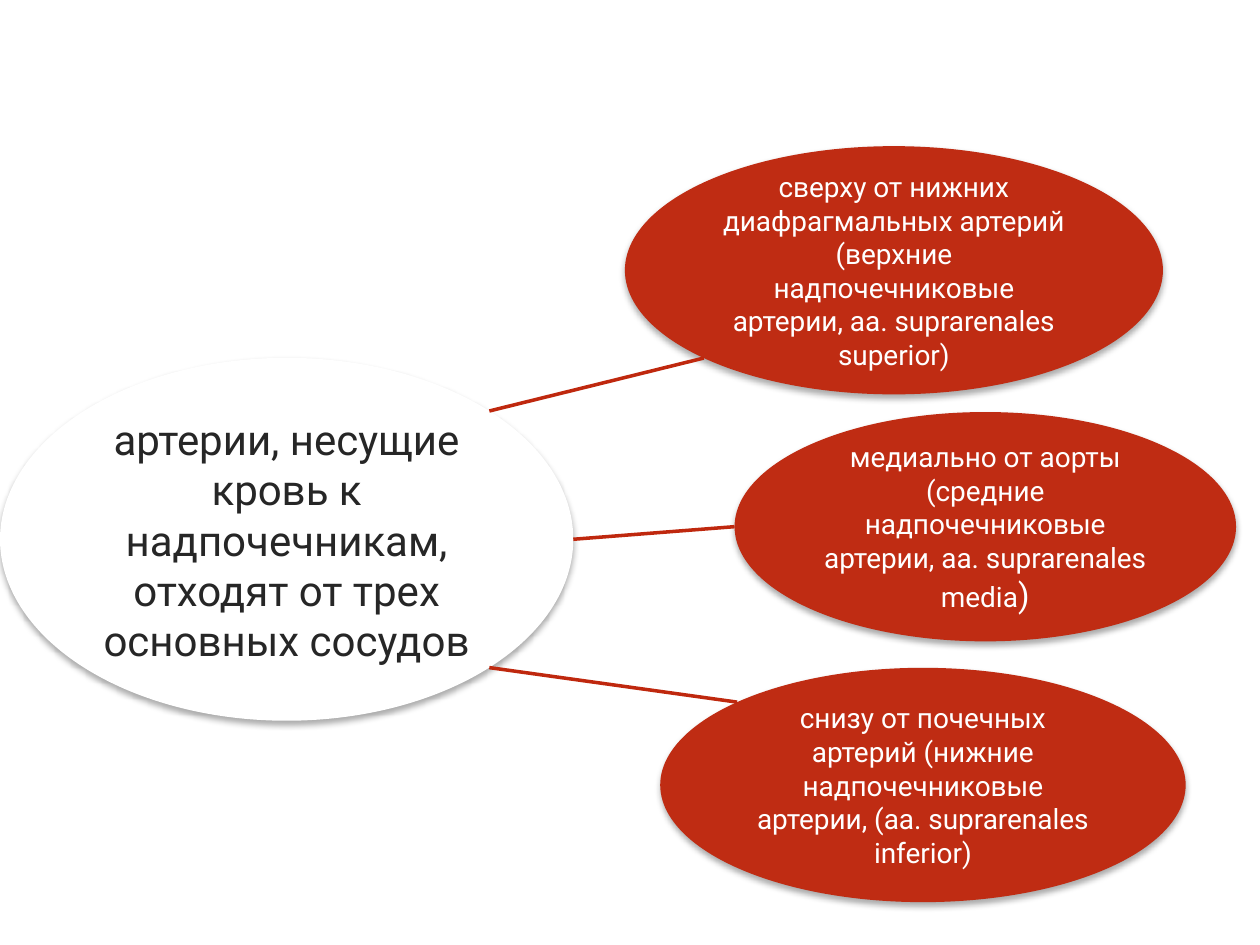
from math import cos, radians, sin

from lxml.etree import SubElement
from pptx import Presentation
from pptx.dml.color import RGBColor
from pptx.enum.shapes import MSO_CONNECTOR, MSO_SHAPE
from pptx.enum.text import MSO_ANCHOR, PP_ALIGN
from pptx.oxml.ns import qn
from pptx.util import Inches, Pt

WIDTH, HEIGHT = Inches(10), Inches(7.5)
FONT = "Roboto"
COLORS = {
    "white": "FFFFFF",
    "red": "BF2C13",
    "line": "BF280E",
    "dark": "262626",
    "shadow": "000000",
}

SOURCE_TEXT = ("артерии, несущие кровь к надпочечникам, "
               "отходят от трех основных сосудов")

# Position in percent of the slide (left, top, width, height), text spans
# with sizes, and the angles at which the line leaves the source and arrives.
BRANCHES = [
    ((49.6, 15.47, 42.7, 26.27),
     [("сверху от нижних диафрагмальных артерий (верхние надпочечниковые "
       "артерии, аа. suprarenales superior)", 16)],
     -45, 135),
    ((58.3, 43.6, 39.8, 24.27),
     [("медиально от аорты (средние надпочечниковые "
       "артерии, аа. suprarenales media", 16), (")", 19)],
     0, 180),
    ((52.4, 70.67, 41.7, 24.8),
     [("снизу от почечных артерий (нижние надпочечниковые "
       "артерии, (аа. suprarenales inferior)", 16)],
     45, 225),
]


def color(name):
    return RGBColor.from_string(COLORS[name])


def add_soft_shadow(shape):
    effects = SubElement(shape._element.spPr, qn("a:effectLst"))
    shadow = SubElement(effects, qn("a:outerShdw"), blurRad=str(Pt(3.5)),
                        dist=str(Pt(2.2)), dir="5400000", rotWithShape="0")
    tint = SubElement(shadow, qn("a:srgbClr"), val=COLORS["shadow"])
    SubElement(tint, qn("a:alpha"), val="32000")


def add_ellipse(page, place, spans, fill, ink):
    left, top, width, height = place
    ellipse = page.shapes.add_shape(
        MSO_SHAPE.OVAL, int(WIDTH * left / 100), int(HEIGHT * top / 100),
        int(WIDTH * width / 100), int(HEIGHT * height / 100))
    ellipse.fill.solid()
    ellipse.fill.fore_color.rgb = color(fill)
    ellipse.line.fill.background()
    add_soft_shadow(ellipse)

    frame = ellipse.text_frame
    frame.word_wrap = True
    frame.vertical_anchor = MSO_ANCHOR.MIDDLE
    paragraph = frame.paragraphs[0]
    paragraph.alignment = PP_ALIGN.CENTER
    paragraph.font.name = FONT
    paragraph.font.color.rgb = color(ink)
    for text, size in spans:
        span = paragraph.add_run()
        span.text = text
        span.font.size = Pt(size)
    return ellipse


def rim_point(ellipse, angle):
    """Return the point of the rim at an angle, clockwise from the right."""
    turn = radians(angle)
    return (int(ellipse.left + ellipse.width * (1 + cos(turn)) / 2),
            int(ellipse.top + ellipse.height * (1 + sin(turn)) / 2))


def add_link(page, start, end):
    link = page.shapes.add_connector(MSO_CONNECTOR.STRAIGHT, *start, *end)
    link.line.color.rgb = color("line")
    link.line.width = Pt(2)
    SubElement(link._element.spPr, qn("a:effectLst"))


def main():
    deck = Presentation()
    deck.slide_width, deck.slide_height = WIDTH, HEIGHT
    page = deck.slides.add_slide(deck.slide_layouts[6])

    source = add_ellipse(page, (0, 37.87, 45.5, 38.4),
                         [(SOURCE_TEXT, 24)], "white", "dark")
    for place, spans, leave, arrive in BRANCHES:
        branch = add_ellipse(page, place, spans, "red", "white")
        add_link(page, rim_point(source, leave), rim_point(branch, arrive))

    deck.save("out.pptx")


if __name__ == "__main__":
    main()
